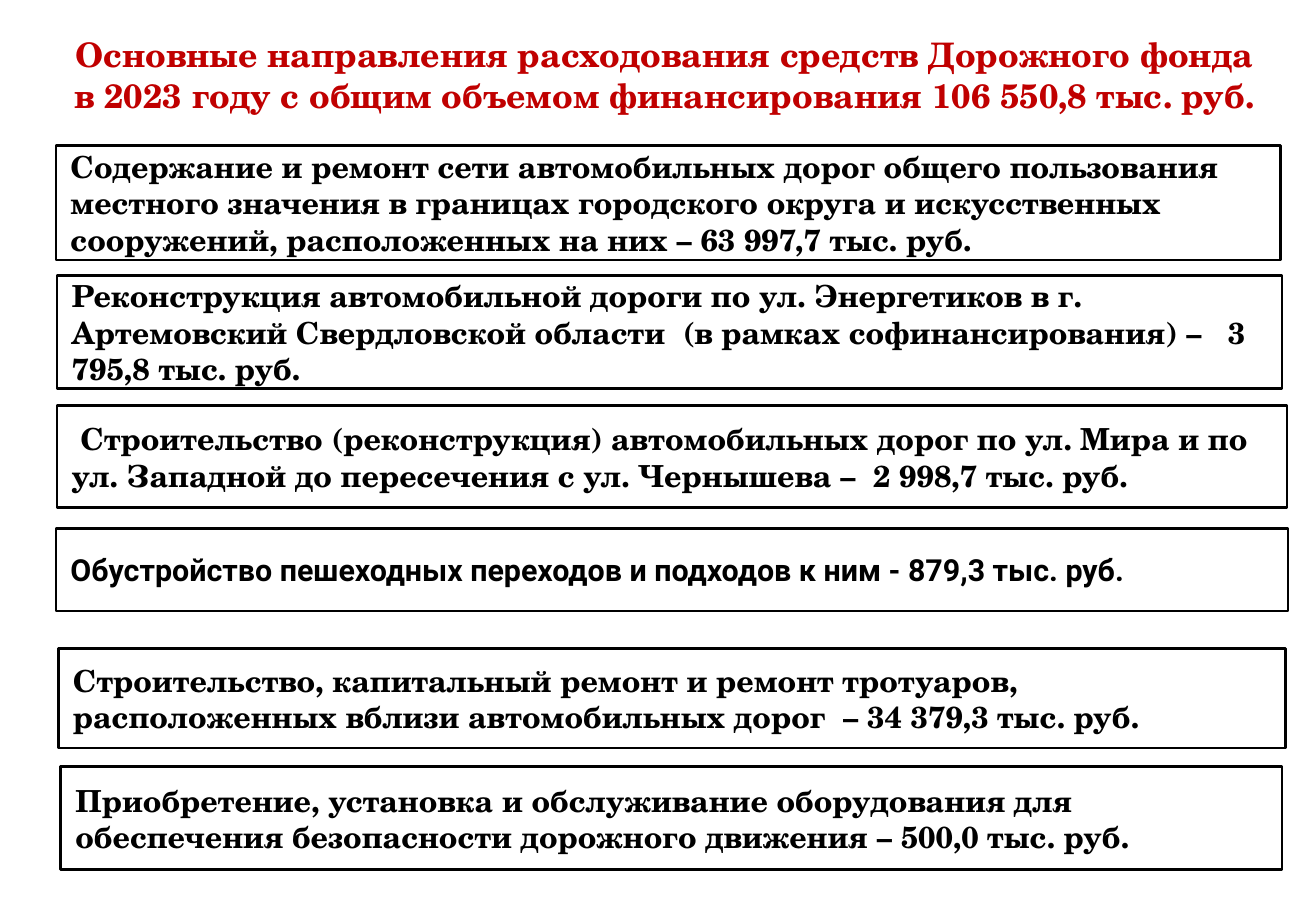
from pptx import Presentation
from pptx.dml.color import RGBColor
from pptx.enum.shapes import MSO_SHAPE
from pptx.enum.text import MSO_ANCHOR, PP_ALIGN
from pptx.util import Emu, Pt

PX = 9144  # 100 px to the inch
BLACK = RGBColor(0x00, 0x00, 0x00)
RED = RGBColor(0xC0, 0x00, 0x00)
SERIF = "TeX Gyre Schola"
SANS = "Roboto"

TITLE_BOX = (50, 23, 994, 77)
TITLE = [
    "Основные направления расходования средств Дорожного фонда",
    "в 2023 году с общим объемом финансирования 106 550,8 тыс. руб.",
]
EXPENSES = [
    ((46, 120, 1008, 94), SERIF,
     "Содержание и ремонт сети автомобильных дорог общего пользования местного значения "
     "в границах городского округа и искусственных сооружений, расположенных на них "
     "– 63 997,7 тыс. руб."),
    ((47, 227, 1008, 93), SERIF,
     "Реконструкция автомобильной дороги по ул. Энергетиков в г. Артемовский "
     "Свердловской области  (в рамках софинансирования) –   3 795,8 тыс. руб."),
    ((47, 334, 1012, 84), SERIF,
     " Строительство (реконструкция) автомобильных дорог по ул. Мира и по ул. Западной "
     "до пересечения с ул. Чернышева –  2 998,7 тыс. руб."),
    ((46, 435, 1014, 68), SANS,
     "Обустройство пешеходных переходов и подходов к ним - 879,3 тыс. руб."),
    ((48, 534, 1010, 82), SERIF,
     "Строительство, капитальный ремонт и ремонт тротуаров, расположенных вблизи "
     "автомобильных дорог  – 34 379,3 тыс. руб."),
    ((50, 631, 1005, 85), SERIF,
     "Приобретение, установка и обслуживание оборудования для обеспечения безопасности "
     "дорожного движения – 500,0 тыс. руб."),
]


def px(*lengths):
    return [Emu(n * PX) for n in lengths]


def write(sp, lines, *, font=SERIF, size=18, color=BLACK, align=PP_ALIGN.LEFT,
          anchor=MSO_ANCHOR.MIDDLE, margins=(12, 0, 12, 0)):
    tf = sp.text_frame
    tf.word_wrap = True
    tf.vertical_anchor = anchor
    tf.margin_left, tf.margin_top, tf.margin_right, tf.margin_bottom = px(*margins)
    for i, line in enumerate(lines):
        p = tf.add_paragraph() if i else tf.paragraphs[0]
        p.alignment = align
        r = p.add_run()
        r.text = line
        r.font.name = font
        r.font.size = Pt(size)
        r.font.bold = True
        r.font.color.rgb = color


def add_title(s, box, lines):
    sp = s.shapes.add_textbox(*px(*box))
    write(sp, lines, size=20, color=RED, align=PP_ALIGN.CENTER,
          anchor=MSO_ANCHOR.TOP, margins=(0, 5, 0, 5))


def add_expense(s, box, font, text):
    sp = s.shapes.add_shape(MSO_SHAPE.RECTANGLE, *px(*box))
    sp.shadow.inherit = False
    sp.fill.background()
    sp.line.color.rgb = BLACK
    sp.line.width = Pt(1.5)
    write(sp, [text], font=font)


def main():
    prs = Presentation()
    prs.slide_width, prs.slide_height = px(1083, 750)
    s = prs.slides.add_slide(prs.slide_layouts[6])
    add_title(s, TITLE_BOX, TITLE)
    for box, font, text in EXPENSES:
        add_expense(s, box, font, text)
    prs.save("out.pptx")


if __name__ == "__main__":
    main()
